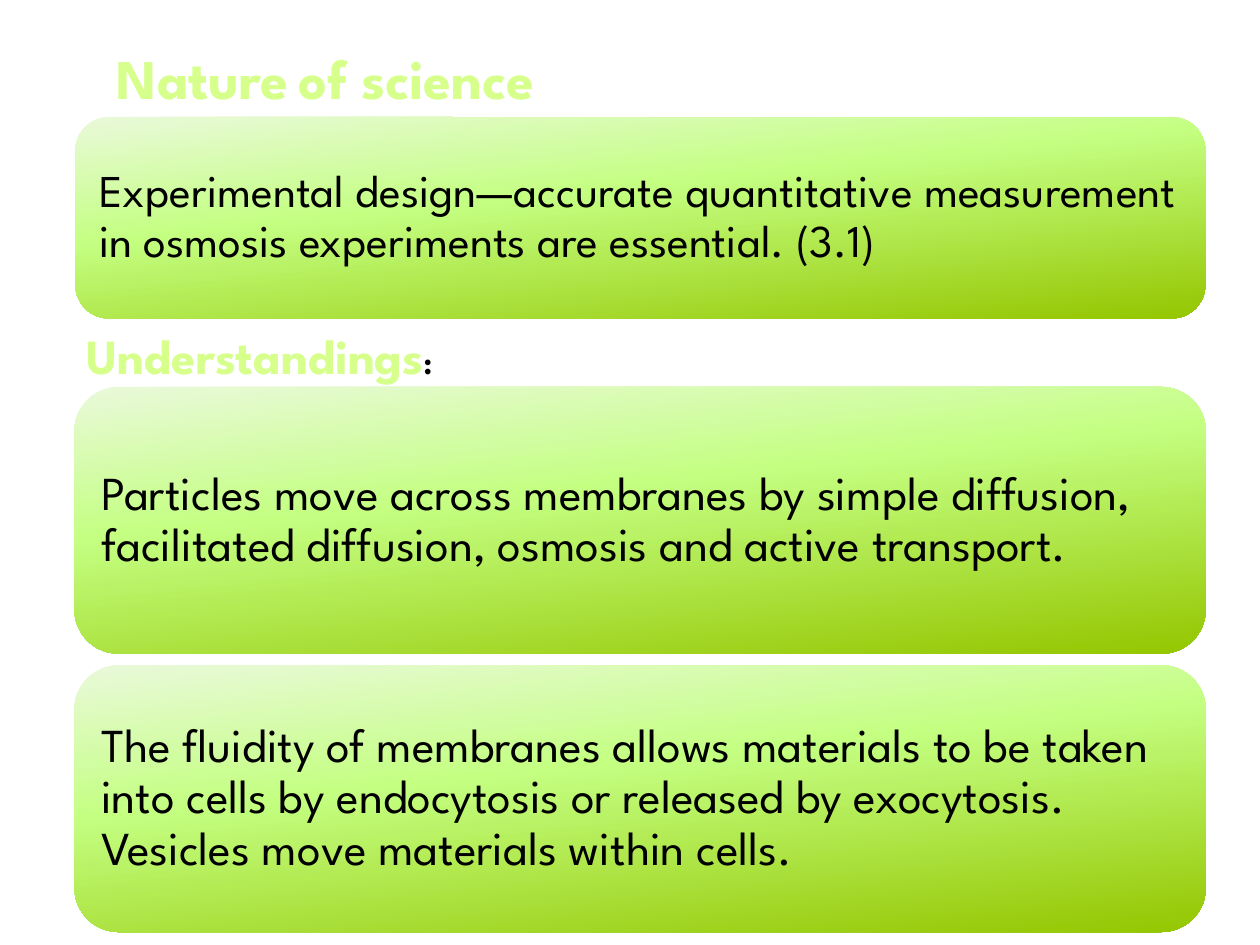
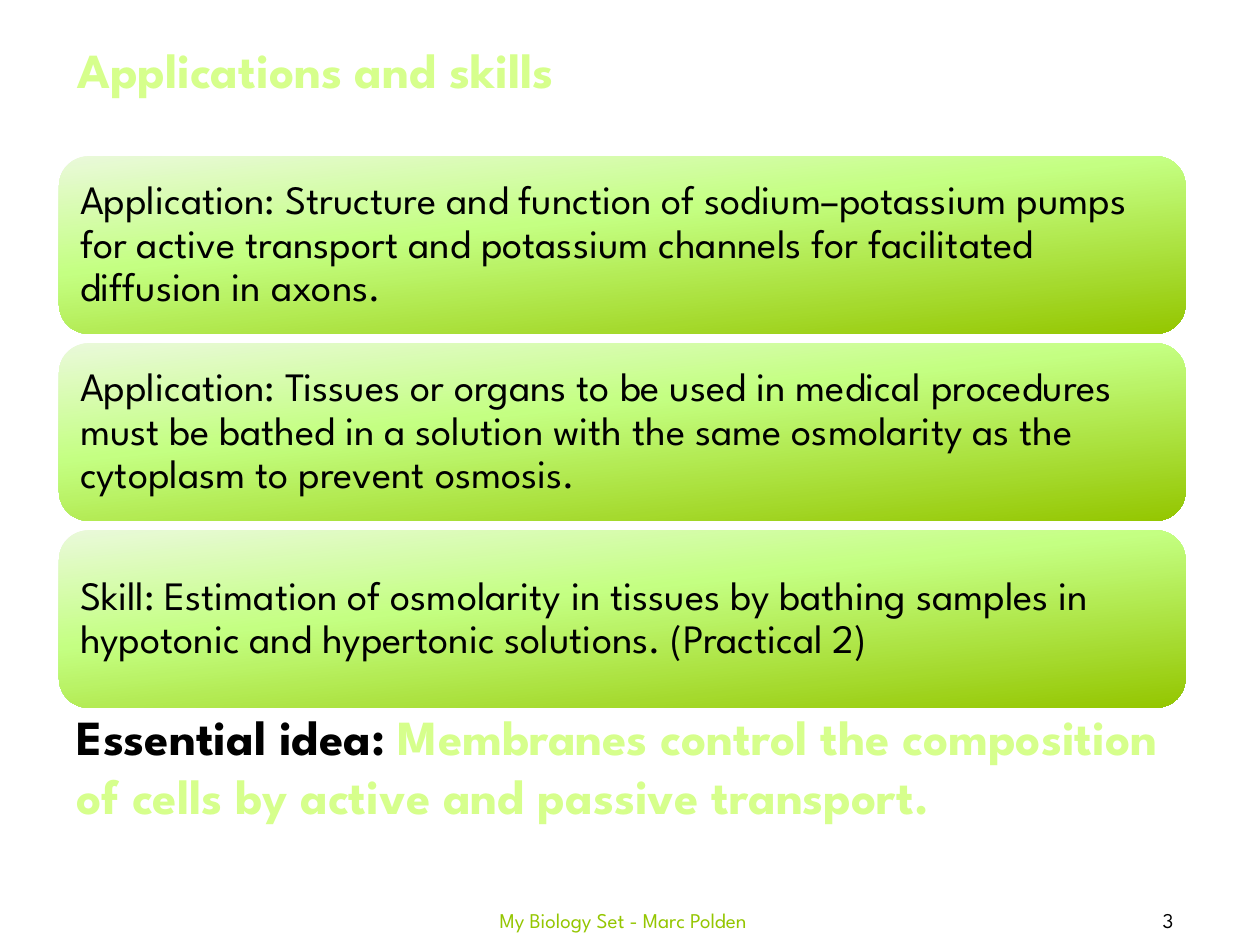
from copy import deepcopy

from lxml.etree import SubElement
from pptx import Presentation
from pptx.dml.color import RGBColor
from pptx.enum.shapes import MSO_SHAPE
from pptx.enum.text import MSO_ANCHOR, MSO_AUTO_SIZE, PP_ALIGN
from pptx.oxml.ns import qn
from pptx.util import Cm, Pt

FONT = "League Spartan"
BLACK = RGBColor(0x00, 0x00, 0x00)
LIME = RGBColor(0xD6, 0xFF, 0x8C)
GREEN = RGBColor(0x94, 0xC6, 0x00)
OUTLINE = RGBColor(0x43, 0x41, 0x28)
CARD_STOPS = [
    (0, RGBColor(0xEA, 0xF9, 0xDA)),
    (0.4, RGBColor(0xC4, 0xFF, 0x82)),
    (1, GREEN),
]
CARD_ANGLE = 360 - 84  # counter-clockwise
TITLE_ONLY = 5

# Boxes are left, top, width, height in cm.
# Heading spans are text, size, colour, outlined.
SLIDES = [
    {
        "title": {
            "box": (1.47, 0.74, 10.19, 1.63),
            "align": PP_ALIGN.CENTER,
            "wrap": False,
            "spans": [
                ("Nature", 32, LIME, True),
                (" ", 20, BLACK, False),
                ("of science", 32, LIME, True),
            ],
        },
        "heading": {
            "box": (1.5, 6.43, 8.13, 1.45),
            "wrap": False,
            "spans": [
                ("Understandings", 28, LIME, True),
                (":", 18, BLACK, False),
            ],
        },
        "stacks": [
            {
                "first": (1.52, 2.36, 22.78, 4.06),
                "gap": 0,
                "size": 26,
                "inset": 0.28,
                "texts": [
                    "Experimental design—accurate quantitative measurement in "
                    "osmosis experiments are essential. (3.1)",
                ],
            },
            {
                "first": (1.5, 7.8, 22.81, 5.38),
                "gap": 0.23,
                "size": 27,
                "inset": 0.28,
                "texts": [
                    "Particles move across membranes by simple diffusion, "
                    "facilitated diffusion, osmosis and active transport.",
                    "The fluidity of membranes allows materials to be taken into "
                    "cells by endocytosis or released by exocytosis. Vesicles "
                    "move materials within cells.",
                ],
            },
        ],
        "footers": [],
    },
    {
        "title": {
            "box": (1.3, 0.66, 12.19, 1.45),
            "spans": [("Applications and skills", 28, LIME, True)],
        },
        "heading": {
            "box": (1.3, 14.12, 22.94, 3.84),
            "spans": [
                ("Essential idea:", 28, BLACK, True),
                (" Membranes control the composition of cells by active and "
                 "passive transport.", 28, LIME, True),
            ],
        },
        "stacks": [
            {
                "first": (1.19, 3.15, 22.71, 3.58),
                "gap": 0.19,
                "size": 23,
                "inset": 0.25,
                "texts": [
                    "Application: Structure and function of sodium–potassium "
                    "pumps for active transport and potassium channels for "
                    "facilitated diffusion in axons.",
                    "Application: Tissues or organs to be used in medical "
                    "procedures must be bathed in a solution with the same "
                    "osmolarity as the cytoplasm to prevent osmosis.",
                    "Skill: Estimation of osmolarity in tissues by bathing "
                    "samples in hypotonic and hypertonic solutions. "
                    "(Practical 2)",
                ],
            },
        ],
        "footers": [
            ("My Biology Set - Marc Polden", (7.7, 18.03, 9.73, 1.02), GREEN),
            ("3", (21.69, 18.03, 3.71, 1.02), BLACK),
        ],
    },
]


def in_cm(box):
    return [Cm(length) for length in box]


def style_font(font, size, color, bold=False):
    font.name = FONT
    font.size = Pt(size)
    font.bold = bold
    font.color.rgb = color


def outline_text(span):
    properties = span.font._element
    line = SubElement(properties, qn("a:ln"), w=str(Pt(1)))
    fill = SubElement(line, qn("a:solidFill"))
    SubElement(fill, qn("a:srgbClr"), val=str(OUTLINE))
    properties.insert(0, line)


def write_heading(shape, heading):
    shape.left, shape.top, shape.width, shape.height = in_cm(heading["box"])
    frame = shape.text_frame
    frame.auto_size = MSO_AUTO_SIZE.NONE
    frame.word_wrap = heading.get("wrap", True)
    frame.vertical_anchor = MSO_ANCHOR.TOP
    para = frame.paragraphs[0]
    para.alignment = heading.get("align", PP_ALIGN.LEFT)
    for text, size, color, outlined in heading["spans"]:
        span = para.add_run()
        span.text = text
        style_font(span.font, size, color, bold=True)
        if outlined:
            outline_text(span)


def fill_card(card):
    card.fill.gradient()
    stop_list = card._element.spPr.find(".//" + qn("a:gsLst"))
    stop_list.insert(1, deepcopy(stop_list[0]))
    for stop, (position, color) in zip(card.fill.gradient_stops, CARD_STOPS):
        stop.position = position
        stop.color.rgb = color
    card.fill.gradient_angle = CARD_ANGLE


def add_card(page, box, text, size, inset):
    card = page.shapes.add_shape(MSO_SHAPE.ROUNDED_RECTANGLE, *in_cm(box))
    card.shadow.inherit = False
    card.line.fill.background()
    fill_card(card)
    frame = card.text_frame
    frame.margin_left = frame.margin_right = Cm(inset)
    frame.margin_top = frame.margin_bottom = Cm(inset)
    frame.word_wrap = True
    frame.vertical_anchor = MSO_ANCHOR.MIDDLE
    frame.text = text
    para = frame.paragraphs[0]
    para.alignment = PP_ALIGN.LEFT
    para.line_spacing = 0.9
    style_font(para.runs[0].font, size, BLACK)


def add_stack(page, stack):
    """Place equal cards below one another, starting from the first box."""
    left, top, width, height = stack["first"]
    for row, text in enumerate(stack["texts"]):
        card_top = top + row * (height + stack["gap"])
        add_card(page, (left, card_top, width, height), text,
                 stack["size"], stack["inset"])


def add_footer(page, text, box, color):
    frame = page.shapes.add_textbox(*in_cm(box)).text_frame
    frame.word_wrap = True
    frame.vertical_anchor = MSO_ANCHOR.MIDDLE
    frame.text = text
    para = frame.paragraphs[0]
    para.alignment = PP_ALIGN.CENTER
    style_font(para.runs[0].font, 12, color)


def add_page(deck, content):
    page = deck.slides.add_slide(deck.slide_layouts[TITLE_ONLY])
    for footer in content["footers"]:
        add_footer(page, *footer)
    for stack in content["stacks"]:
        add_stack(page, stack)
    write_heading(page.shapes.title, content["title"])
    heading = content["heading"]
    write_heading(page.shapes.add_textbox(*in_cm(heading["box"])), heading)


def main():
    deck = Presentation()
    deck.slide_width, deck.slide_height = Cm(25.4), Cm(19.05)
    for content in SLIDES:
        add_page(deck, content)
    deck.save("out.pptx")


if __name__ == "__main__":
    main()
